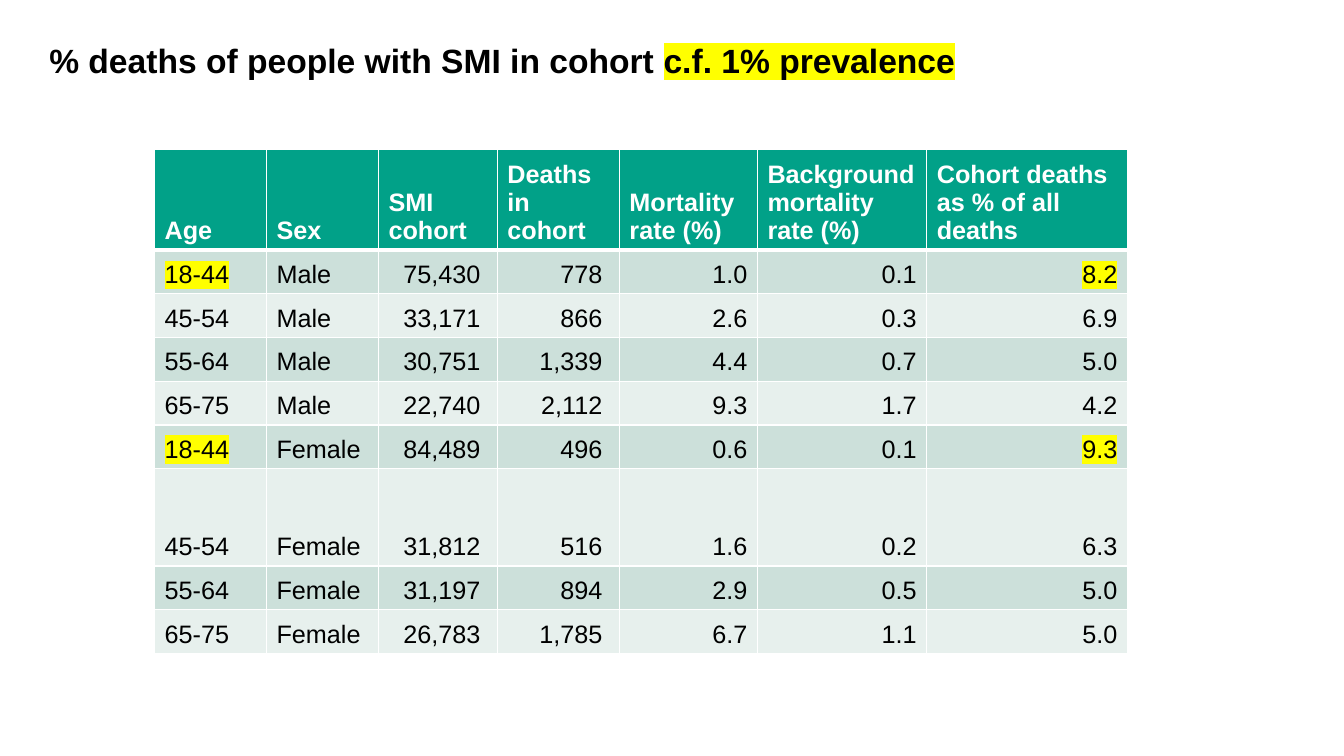
from dataclasses import dataclass

from lxml.etree import SubElement
from pptx import Presentation
from pptx.dml.color import RGBColor
from pptx.enum.text import MSO_ANCHOR as Anchor, PP_ALIGN as Align
from pptx.oxml import parse_xml
from pptx.oxml.ns import nsdecls, qn
from pptx.util import Inches, Length, Pt


@dataclass(frozen=True)
class Theme:
    font: str = "Arial"
    title_size: int = 24
    table_size: int = 18
    ink: str = "000000"
    paper: str = "FFFFFF"
    header: str = "01A188"
    bands: tuple[str, str] = ("CCE0DA", "E7F0ED")
    marker: str = "FFFF00"
    rule: int = 1
    header_rule: int = 3


@dataclass(frozen=True)
class Column:
    heading: str
    width: float  # percent of the slide's width
    align: Align = Align.RIGHT
    right_margin: float = 0.75


@dataclass(frozen=True)
class Cohort:
    age: str
    sex: str
    figures: tuple[str, ...]
    height: float = 5.79  # percent of the slide's height

    @property
    def values(self) -> tuple[str, ...]:
        return (self.age, self.sex, *self.figures)


THEME = Theme()
SLIDE_WIDTH, SLIDE_HEIGHT = Inches(13.33), Inches(7.5)
HEADER_HEIGHT = 12.4
MARKED_AGE = "18-44"

COLUMNS = (
    Column("Age", 8.33, Align.LEFT),
    Column("Sex", 8.33, Align.LEFT),
    Column("SMI cohort", 8.85, right_margin=1.27),
    Column("Deaths in cohort", 9.08, right_margin=1.27),
    Column("Mortality rate (%)", 10.27),
    Column("Background mortality rate (%)", 12.6),
    Column("Cohort deaths as % of all deaths", 14.93),
)
COHORTS = (
    Cohort("18-44", "Male", ("75,430", "778", "1.0", "0.1", "8.2")),
    Cohort("45-54", "Male", ("33,171", "866", "2.6", "0.3", "6.9")),
    Cohort("55-64", "Male", ("30,751", "1,339", "4.4", "0.7", "5.0")),
    Cohort("65-75", "Male", ("22,740", "2,112", "9.3", "1.7", "4.2")),
    Cohort("18-44", "Female", ("84,489", "496", "0.6", "0.1", "9.3")),
    Cohort("45-54", "Female", ("31,812", "516", "1.6", "0.2", "6.3"), 12.87),
    Cohort("55-64", "Female", ("31,197", "894", "2.9", "0.5", "5.0")),
    Cohort("65-75", "Female", ("26,783", "1,785", "6.7", "1.1", "5.0")),
)


def across(percent: float) -> Length:
    return Length(round(SLIDE_WIDTH * percent / 100))


def down(percent: float) -> Length:
    return Length(round(SLIDE_HEIGHT * percent / 100))


def style_run(run, size: int, color: str, bold: bool, marked: bool) -> None:
    font = run.font
    font.name, font.size, font.bold = THEME.font, Pt(size), bold
    font.color.rgb = RGBColor.from_string(color)
    if marked:
        marker = parse_xml(f'<a:highlight {nsdecls("a")}><a:srgbClr val="{THEME.marker}"/></a:highlight>')
        run._r.rPr.find(qn("a:solidFill")).addnext(marker)


def add_borders(cell, bottom: int) -> None:
    """Rule all four sides; line elements must precede the cell's fill."""
    properties = cell._tc.get_or_add_tcPr()
    widths = {"lnL": THEME.rule, "lnR": THEME.rule, "lnT": THEME.rule, "lnB": bottom}
    for position, (side, width) in enumerate(widths.items()):
        line = SubElement(properties, qn(f"a:{side}"), w=str(Pt(width)))
        fill = SubElement(line, qn("a:solidFill"))
        SubElement(fill, qn("a:srgbClr"), val=THEME.paper)
        properties.insert(position, line)


def fill_cell(cell, text: str, fill: str, align: Align, is_header: bool = False,
              marked: bool = False) -> None:
    cell.text_frame.text = text
    cell.vertical_anchor = Anchor.BOTTOM
    cell.fill.solid()
    cell.fill.fore_color.rgb = RGBColor.from_string(fill)
    paragraph = cell.text_frame.paragraphs[0]
    paragraph.alignment = align
    color = THEME.paper if is_header else THEME.ink
    style_run(paragraph.runs[0], THEME.table_size, color, is_header, marked)
    add_borders(cell, THEME.header_rule if is_header else THEME.rule)


def add_title(slide) -> None:
    title = slide.shapes.add_textbox(across(2.93), down(5.2), across(93.92), down(12.27))
    title.text_frame.word_wrap = True
    paragraph = title.text_frame.paragraphs[0]
    paragraph.line_spacing = 0.9
    for text, marked in (("% deaths of people with SMI in cohort ", False), ("c.f. 1% prevalence", True)):
        run = paragraph.add_run()
        run.text = text
        style_run(run, THEME.title_size, THEME.ink, True, marked)


def add_mortality_table(slide) -> None:
    heights = (HEADER_HEIGHT, *(cohort.height for cohort in COHORTS))
    width = across(sum(column.width for column in COLUMNS))
    table = slide.shapes.add_table(len(heights), len(COLUMNS), across(11.5), down(19.73),
                                   width, down(sum(heights))).table
    for row, height in zip(table.rows, heights):
        row.height = down(height)
    for index, column in enumerate(COLUMNS):
        table.columns[index].width = across(column.width)
        fill_cell(table.cell(0, index), column.heading, THEME.header, Align.LEFT, is_header=True)
        for row, cohort in enumerate(COHORTS, start=1):
            cell = table.cell(row, index)
            marked = cohort.age == MARKED_AGE and index in (0, len(COLUMNS) - 1)
            fill_cell(cell, cohort.values[index], THEME.bands[(row - 1) % 2], column.align, marked=marked)
            cell.margin_right = across(column.right_margin)


def main() -> None:
    presentation = Presentation()
    presentation.slide_width, presentation.slide_height = SLIDE_WIDTH, SLIDE_HEIGHT
    slide = presentation.slides.add_slide(presentation.slide_layouts[6])
    add_title(slide)
    add_mortality_table(slide)
    presentation.save("out.pptx")


if __name__ == "__main__":
    main()
